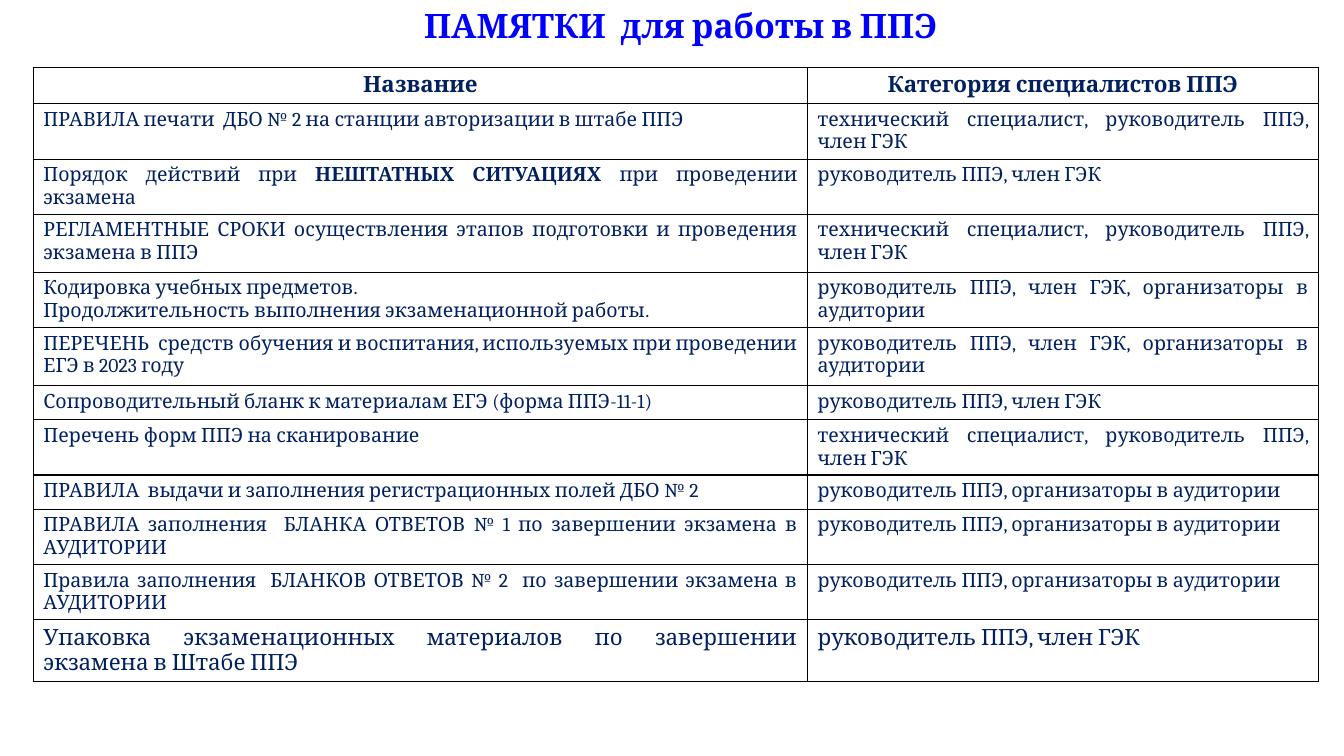
from dataclasses import dataclass

from lxml import etree
from pptx import Presentation
from pptx.dml.color import RGBColor
from pptx.enum.text import MSO_ANCHOR, PP_ALIGN
from pptx.oxml.ns import qn
from pptx.slide import Slide
from pptx.table import _Cell
from pptx.text.text import TextFrame
from pptx.util import Cm, Pt

CENTER = PP_ALIGN.CENTER
JUSTIFY = PP_ALIGN.JUSTIFY
TOP = MSO_ANCHOR.TOP

FACE = "Cambria"
COLORS = {"title": "0000FF", "text": "002060", "fill": "FFFFFF", "line": "000000"}
COLS = (19.51, 12.88)
EDGES = ("a:lnL", "a:lnR", "a:lnT", "a:lnB")

HEAD = "руководитель ППЭ"
CHIEF = f"{HEAD}, член ГЭК"
TECH = f"технический специалист, {CHIEF}"
ROOMS = f"{CHIEF}, организаторы в аудитории"
ROOM = f"{HEAD}, организаторы в аудитории"


@dataclass
class Row:
    name: str
    staff: str
    height: float
    size: int = 14
    bold: bool = False
    align: PP_ALIGN = JUSTIFY


ROWS = [
    Row("Название", "Категория специалистов ППЭ", 0.91, 16, True, CENTER),
    Row("ПРАВИЛА печати  ДБО № 2 на станции авторизации в штабе ППЭ", TECH, 1.4),
    Row("Порядок действий при *НЕШТАТНЫХ СИТУАЦИЯХ *при проведении экзамена", CHIEF, 0.86),
    Row("РЕГЛАМЕНТНЫЕ СРОКИ осуществления этапов подготовки и проведения "
        "экзамена в ППЭ", TECH, 1.46),
    Row("Кодировка учебных предметов.\n"
        "Продолжительность выполнения экзаменационной работы.", ROOMS, 1.4),
    Row("ПЕРЕЧЕНЬ  средств обучения и воспитания, используемых при проведении "
        "ЕГЭ в 2023 году", ROOMS, 1.46),
    Row("Сопроводительный бланк к материалам ЕГЭ (форма ППЭ-11-1)", CHIEF, 0.86),
    Row("Перечень форм ППЭ на сканирование", TECH, 0.86),
    Row("ПРАВИЛА  выдачи и заполнения регистрационных полей ДБО № 2", ROOM, 0.86),
    Row("ПРАВИЛА заполнения  БЛАНКА ОТВЕТОВ № 1 по завершении экзамена в "
        "АУДИТОРИИ", ROOM, 1.38),
    Row("Правила заполнения  БЛАНКОВ ОТВЕТОВ № 2  по завершении экзамена в "
        "АУДИТОРИИ", ROOM, 1.4),
    Row("Упаковка экзаменационных материалов по завершении экзамена в Штабе ППЭ",
        CHIEF, 1.4, 16),
]


def write(frame: TextFrame, text: str, size: int, bold: bool,
          align: PP_ALIGN, color: str) -> None:
    frame.word_wrap = True
    for i, line in enumerate(text.split("\n")):
        para = frame.paragraphs[0] if i == 0 else frame.add_paragraph()
        para.alignment = align
        para.font.name = FACE
        para.font.size = Pt(size)
        para.font.bold = bold
        para.font.color.rgb = RGBColor.from_string(COLORS[color])
        for j, part in enumerate(line.split("*")):
            run = para.add_run()
            run.text = part
            if j % 2:
                run.font.bold = True


def frame_cell(cell: _Cell) -> None:
    cell.fill.solid()
    cell.fill.fore_color.rgb = RGBColor.from_string(COLORS["fill"])
    props = cell._tc.get_or_add_tcPr()
    for i, edge in enumerate(EDGES):
        line = etree.Element(qn(edge), w=str(Pt(1)))
        fill = etree.SubElement(line, qn("a:solidFill"))
        etree.SubElement(fill, qn("a:srgbClr"), val=COLORS["line"])
        props.insert(i, line)


def add_title(slide: Slide) -> None:
    box = slide.shapes.add_textbox(Cm(0.43), Cm(0), Cm(33.45), Cm(1.27))
    write(box.text_frame, "ПАМЯТКИ  для работы в ППЭ", 24, True, CENTER, "title")


def add_memos(slide: Slide) -> None:
    table = slide.shapes.add_table(
        len(ROWS), len(COLS), Cm(0.84), Cm(1.7), Cm(sum(COLS)),
        Cm(sum(row.height for row in ROWS))).table
    table.first_row = False
    table.horz_banding = False
    for col, width in zip(table.columns, COLS):
        col.width = Cm(width)
    for i, row in enumerate(ROWS):
        table.rows[i].height = Cm(row.height)
        for j, text in enumerate((row.name, row.staff)):
            cell = table.cell(i, j)
            cell.vertical_anchor = TOP
            frame_cell(cell)
            write(cell.text_frame, text, row.size, row.bold, row.align, "text")


def main() -> None:
    deck = Presentation()
    deck.slide_width = Cm(33.87)
    deck.slide_height = Cm(19.05)
    slide = deck.slides.add_slide(deck.slide_layouts[6])
    add_memos(slide)
    add_title(slide)
    deck.save("out.pptx")


if __name__ == "__main__":
    main()
